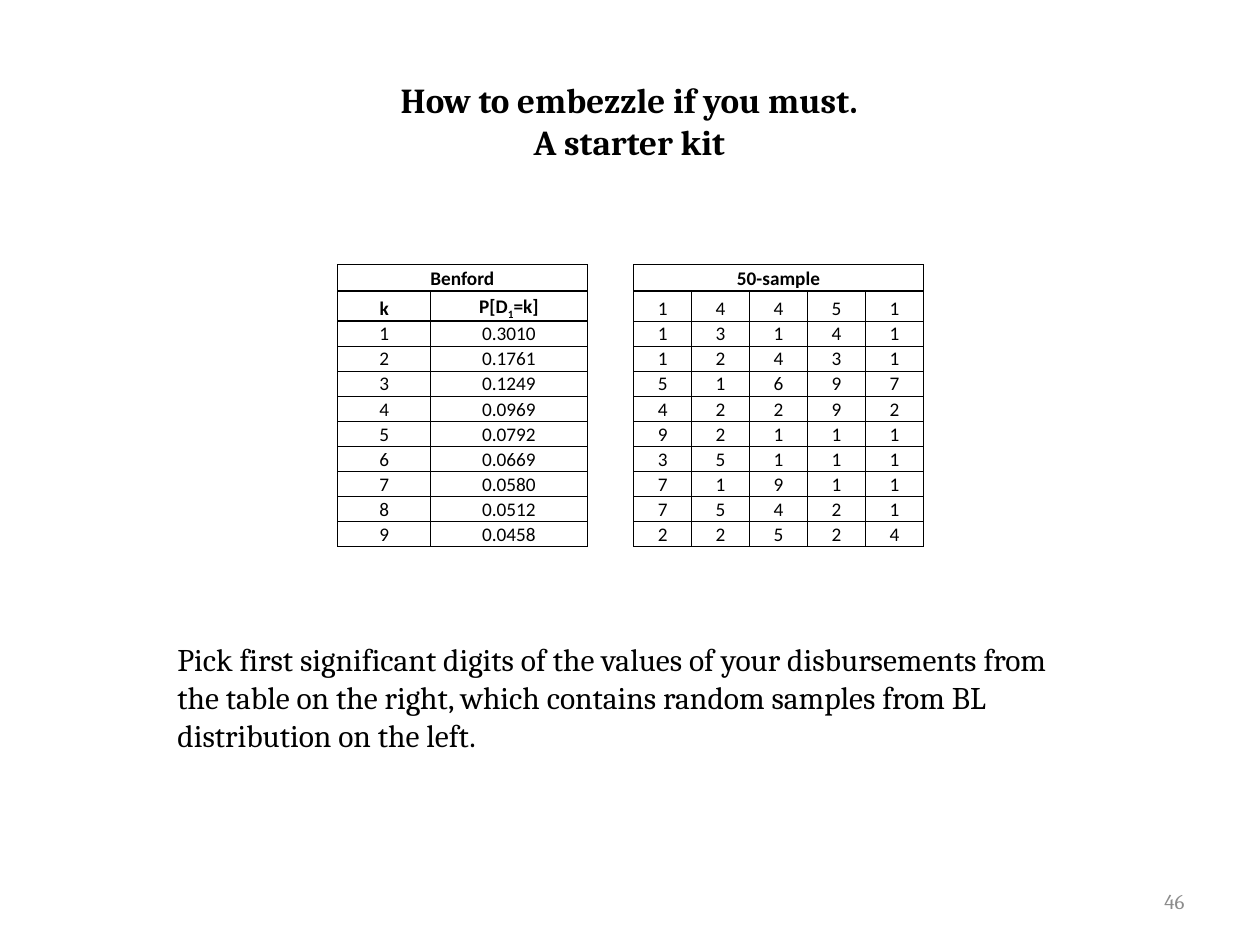
import pptx
import pptx.dml.color
import pptx.enum.text
import pptx.oxml
import pptx.oxml.ns
import pptx.util

Inches = pptx.util.Inches
ALIGN = pptx.enum.text.PP_ALIGN
ANCHOR = pptx.enum.text.MSO_ANCHOR

# Content
TITLE = ["How to embezzle if you must.", "A starter kit"]
ADVICE = [
    "Pick first significant digits of the values of your disbursements from "
    "the table on the right, which contains random samples from BL "
    "distribution on the left."
]
PAGE_NUMBER = ["46"]
BENFORD_HEADING = "Benford"
BENFORD_COLUMNS = ["k", ("P[D", "1", "=k]")]  # the middle part is a subscript
PROBABILITIES = ["0.3010", "0.1761", "0.1249", "0.0969", "0.0792",
                 "0.0669", "0.0580", "0.0512", "0.0458"]
SAMPLE_HEADING = "50-sample"
SAMPLE_ROWS = ["14451", "13141", "12431", "51697", "42292",
               "92111", "35111", "71911", "75421", "22524"]

# Theme
BLACK = pptx.dml.color.RGBColor(0, 0, 0)
GREY = pptx.dml.color.RGBColor(0x8C, 0x8C, 0x8C)
THEME = {
    "title": {"name": "Cambria", "size": 20, "bold": True, "color": BLACK},
    "body": {"name": "Cambria", "size": 18, "bold": False, "color": BLACK},
    "number": {"name": "Cambria", "size": 12, "bold": False, "color": GREY},
    "heading": {"name": "Calibri", "size": 11, "bold": True, "color": BLACK},
    "cell": {"name": "Calibri", "size": 11, "bold": False, "color": BLACK},
}
CELL_FORMAT = {
    "margin_left": Inches(0.01), "margin_right": Inches(0.01),
    "margin_top": Inches(0.01), "margin_bottom": 0,
    "vertical_anchor": ANCHOR.BOTTOM,
}
PLAIN_TABLE_STYLE = "{2D5ABB26-0587-4C30-8999-92F81FD0307C}"
THIN, THICK = 0.5, 1

# Table layout: an empty frame surrounds both blocks
COLUMN_WIDTHS = [0.74, 0.74, 1.24, 0.37] + [0.46] * 5 + [0.74]
ROW_HEIGHTS = [0.19, 0.21, 0.24] + [0.19] * 10
HEADING_ROW, LABEL_ROW = 1, 2
BENFORD_LEFT, SAMPLE_LEFT = 1, 4


def set_font(font, style):
    for name, value in THEME[style].items():
        if name == "color":
            font.color.rgb = value
        else:
            setattr(font, name, pptx.util.Pt(value) if name == "size" else value)


def write_paragraphs(shape, lines, style, alignment, anchor=ANCHOR.TOP):
    frame = shape.text_frame
    frame.word_wrap = True
    frame.auto_size = pptx.enum.text.MSO_AUTO_SIZE.NONE
    frame.vertical_anchor = anchor
    for index, line in enumerate(lines):
        paragraph = frame.add_paragraph() if index else frame.paragraphs[0]
        paragraph.alignment = alignment
        paragraph.space_before = 0
        run = paragraph.add_run()
        run.text = line
        set_font(run.font, style)


def write_cell(cell, content, style):
    paragraph = cell.text_frame.paragraphs[0]
    paragraph.alignment = ALIGN.CENTER
    parts = [content] if isinstance(content, str) else content
    for index, part in enumerate(parts):
        run = paragraph.add_run()
        run.text = part
        set_font(run.font, style)
        if index == 1:
            run.font._element.set("baseline", "-25000")


def set_borders(cell, widths):
    properties = cell._tc.get_or_add_tcPr()
    for side, width in widths.items():
        properties.append(pptx.oxml.parse_xml(
            f'<a:ln{side} {pptx.oxml.ns.nsdecls("a")} w="{pptx.util.Pt(width)}">'
            f'<a:solidFill><a:srgbClr val="{BLACK}"/></a:solidFill></a:ln{side}>'))


def fill_block(table, left, heading, rows):
    last_column = left + len(rows[0]) - 1
    table.cell(HEADING_ROW, left).merge(table.cell(HEADING_ROW, last_column))
    write_cell(table.cell(HEADING_ROW, left), heading, "heading")
    for row_index, row in enumerate(rows, LABEL_ROW):
        for column, content in enumerate(row, left):
            labels = rows[0] is BENFORD_COLUMNS and row_index == LABEL_ROW
            write_cell(table.cell(row_index, column), content,
                       "heading" if labels else "cell")
    # The rule under the headings is heavier than the others
    ruled = {HEADING_ROW, LABEL_ROW} if rows[0] is BENFORD_COLUMNS else {HEADING_ROW}
    for row_index in range(HEADING_ROW, LABEL_ROW + len(rows)):
        for column in range(left, last_column + 1):
            set_borders(table.cell(row_index, column), {
                "L": THIN, "R": THIN,
                "T": THICK if row_index - 1 in ruled else THIN,
                "B": THICK if row_index in ruled else THIN})


def add_tables(slide):
    frame = slide.shapes.add_table(
        len(ROW_HEIGHTS), len(COLUMN_WIDTHS), Inches(1.94), Inches(1.9),
        Inches(sum(COLUMN_WIDTHS)), Inches(sum(ROW_HEIGHTS)))
    table = frame.table
    table.first_row = table.horz_banding = False
    table._tbl.tblPr.find(pptx.oxml.ns.qn("a:tableStyleId")).text = PLAIN_TABLE_STYLE
    for column, width in zip(table.columns, COLUMN_WIDTHS):
        column.width = Inches(width)
    for row, height in zip(table.rows, ROW_HEIGHTS):
        row.height = Inches(height)

    benford_rows = [[str(digit), chance] for digit, chance in enumerate(PROBABILITIES, 1)]
    fill_block(table, BENFORD_LEFT, BENFORD_HEADING, [BENFORD_COLUMNS] + benford_rows)
    fill_block(table, SAMPLE_LEFT, SAMPLE_HEADING, SAMPLE_ROWS)

    # Empty cells need a small type size too, or their rows grow
    for cell in table.iter_cells():
        for name, value in CELL_FORMAT.items():
            setattr(cell, name, value)
        cell.fill.background()
        paragraph = cell.text_frame.paragraphs[0]
        if not paragraph.runs:
            end = pptx.oxml.parse_xml(
                f'<a:endParaRPr {pptx.oxml.ns.nsdecls("a")} '
                f'sz="{THEME["cell"]["size"] * 100}"/>')
            paragraph._p.append(end)


def main():
    presentation = pptx.Presentation()
    presentation.slide_width, presentation.slide_height = Inches(10), Inches(7.5)
    slide = presentation.slides.add_slide(presentation.slide_layouts[5])

    # Title
    title = slide.shapes.title
    title.left, title.top = Inches(2.67), Inches(0.57)
    title.width, title.height = Inches(4.65), Inches(0.77)
    write_paragraphs(title, TITLE, "title", ALIGN.CENTER)

    # Probabilities and random sample
    add_tables(slide)

    # Advice and page number
    advice = slide.shapes.add_textbox(Inches(1.31), Inches(5.03), Inches(7.38), Inches(1.01))
    write_paragraphs(advice, ADVICE, "body", ALIGN.LEFT)
    number = slide.shapes.add_textbox(Inches(7.17), Inches(6.95), Inches(2.33), Inches(0.4))
    write_paragraphs(number, PAGE_NUMBER, "number", ALIGN.RIGHT, ANCHOR.MIDDLE)

    presentation.save("out.pptx")


if __name__ == "__main__":
    main()
